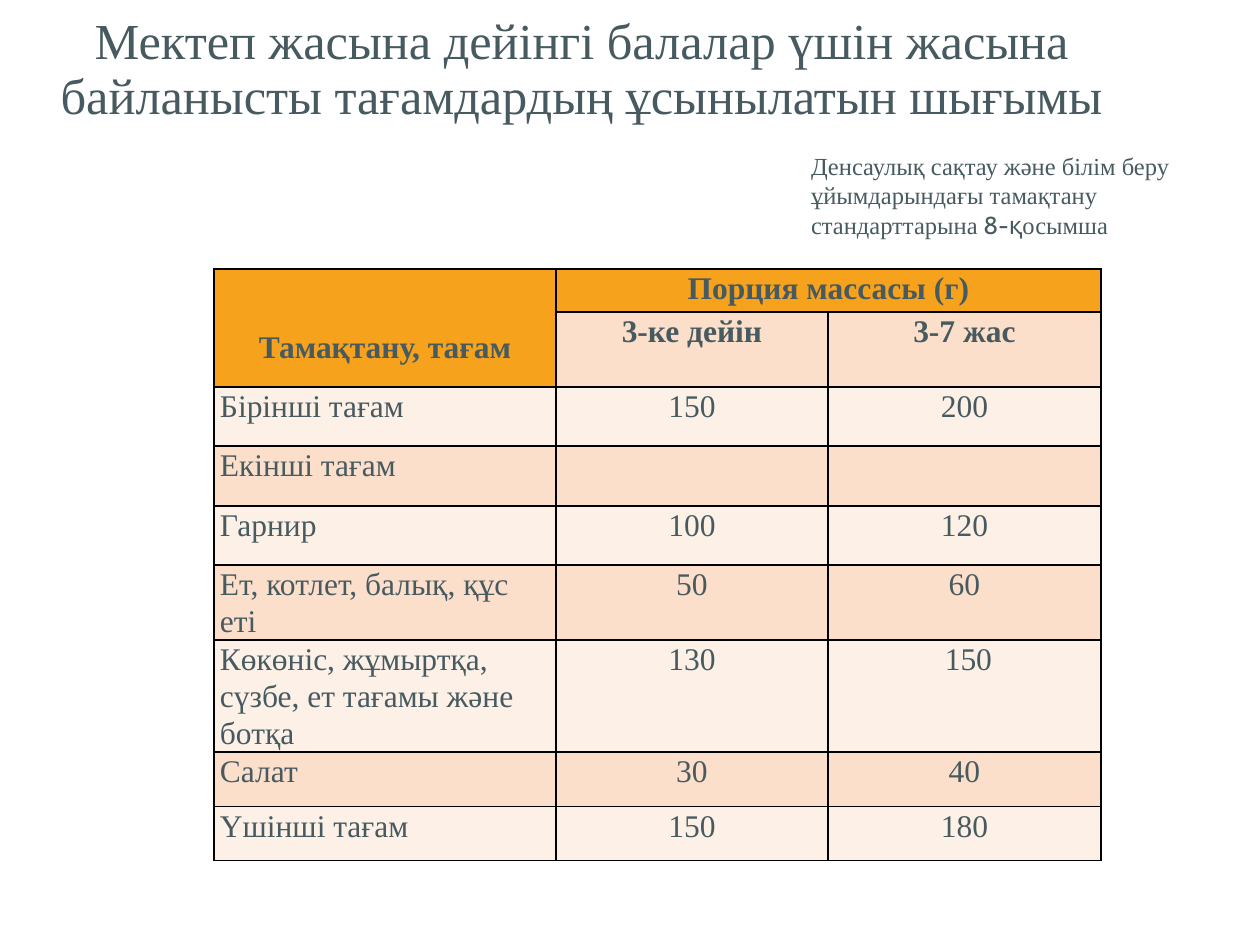
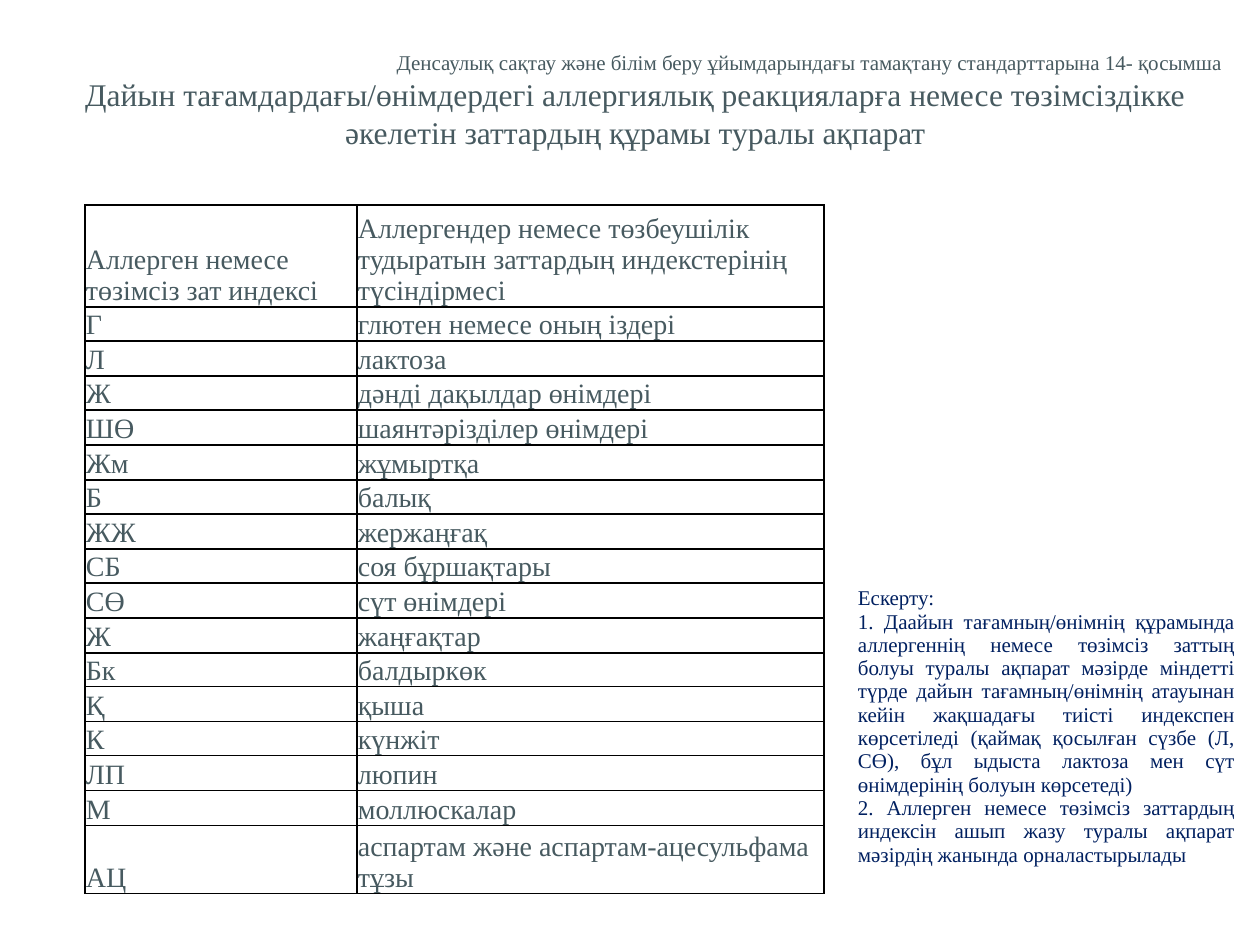
from lxml.etree import SubElement
from pptx import Presentation
from pptx.dml.color import RGBColor as RGB
from pptx.enum.text import MSO_ANCHOR as Anchor, MSO_AUTO_SIZE as Fit, PP_ALIGN as Align
from pptx.oxml.ns import qn
from pptx.util import Emu, Pt

PX = 914400 / 126
FONT, ALT = "Times New Roman", "Cabin"
SLATE, NAVY, BLACK = RGB(0x47, 0x5A, 0x60), RGB(0, 0x20, 0x60), RGB(0, 0, 0)
WHITE, AMBER = RGB(255, 255, 255), RGB(0xF6, 0xA2, 0x1D)
PEACH, CREAM = RGB(0xFB, 0xDF, 0xCB), RGB(0xFD, 0xF0, 0xE7)

TITLE = "Мектеп жасына дейінгі балалар үшін жасына байланысты тағамдардың ұсынылатын шығымы"
ANNEX = [
    ("Денсаулық сақтау және білім беру ұйымдарындағы тамақтану стандарттарына", FONT),
    (" 8-қ", ALT),
    ("осымша", FONT),
]
MEALS = [
    ("Тамақтану, тағам", "Порция массасы (г)", ""),
    ("", "3-ке дейін", "3-7 жас"),
    ("Бірінші тағам", "150", "200"),
    ("Екінші тағам", "", ""),
    ("Гарнир", "100", "120"),
    ("Ет, котлет, балық, құс еті", "50", "60"),
    ("Көкөніс, жұмыртқа, сүзбе, ет тағамы және ботқа", "130", " 150"),
    ("Салат", "30", "40"),
    ("Үшінші тағам", "150", "180"),
]
MEAL_ROWS = [43, 75, 59, 60, 59, 75, 112, 55, 54]

HEADING = [
    ("Денсаулық сақтау және білім беру ұйымдарындағы тамақтану стандарттарына 14- қосымша",
     12, Align.RIGHT),
    ("Дайын тағамдардағы/өнімдердегі аллергиялық реакцияларға немесе төзімсіздікке "
     "әкелетін заттардың құрамы туралы ақпарат", 18, Align.CENTER),
]
CODES = [
    ("Аллерген немесе төзімсіз зат индексі",
     "Аллергендер немесе төзбеушілік тудыратын заттардың индекстерінің түсіндірмесі"),
    ("Г", "глютен немесе оның іздері"),
    ("Л", "лактоза"),
    ("Ж", "дәнді дақылдар өнімдері"),
    ("ШӨ", "шаянтәрізділер өнімдері"),
    ("Жм", "жұмыртқа"),
    ("Б", "балық"),
    ("ЖЖ", "жержаңғақ"),
    ("СБ", "соя бұршақтары"),
    ("СӨ", "сүт өнімдері"),
    ("Ж", "жаңғақтар"),
    ("Бк", "балдыркөк"),
    ("Қ", "қыша"),
    ("К", "күнжіт"),
    ("ЛП", "люпин"),
    ("М", "моллюскалар"),
    ("АЦ", "аспартам және аспартам-ацесульфама тұзы"),
]
NOTES = [
    "Ескерту:",
    "1. Даайын тағамның/өнімнің құрамында аллергеннің немесе төзімсіз заттың болуы туралы "
    "ақпарат мәзірде міндетті түрде дайын тағамның/өнімнің атауынан кейін жақшадағы тиісті "
    "индекспен көрсетіледі (қаймақ қосылған сүзбе (Л, СӨ), бұл ыдыста лактоза мен сүт "
    "өнімдерінің болуын көрсетеді)",
    "2. Аллерген немесе төзімсіз заттардың индексін ашып жазу туралы ақпарат мәзірдің "
    "жанында орналастырылады",
]


def px(*nums):
    return [Emu(round(n * PX)) for n in nums]


def style(para, size, align=Align.LEFT, color=SLATE, bold=False, lead=1.0):
    para.alignment, para.line_spacing = align, lead
    font = para.font
    font.name, font.size, font.bold = FONT, Pt(size), bold
    font.color.rgb = color


def inset(part, left, top, right, low):
    """Set the margins of a cell or text frame."""
    part.margin_left, part.margin_top, part.margin_right, part.margin_bottom = px(
        left, top, right, low)


def border(cell):
    props = cell._tc.get_or_add_tcPr()
    for i, side in enumerate(("lnL", "lnR", "lnT", "lnB")):
        line = SubElement(props, qn("a:" + side), w=str(Pt(1)))
        fill = SubElement(line, qn("a:solidFill"))
        SubElement(fill, qn("a:srgbClr"), val=str(BLACK))
        props.insert(i, line)


def grid(slide, left, top, cols, rows):
    """Add a plain table with the given column widths and row heights."""
    shape = slide.shapes.add_table(
        len(rows), len(cols), *px(left, top, sum(cols), sum(rows)))
    table = shape.table
    table.first_row = table.horz_banding = False
    for col, wide in zip(table.columns, px(*cols)):
        col.width = wide
    for row, high in zip(table.rows, px(*rows)):
        row.height = high
    return table


def paint(part, color):
    part.fill.solid()
    part.fill.fore_color.rgb = color


def head(slide, box, pad):
    """Place the title and return its text frame."""
    title = slide.shapes.title
    title.left, title.top, title.width, title.height = px(*box)
    frame = title.text_frame
    frame.auto_size, frame.word_wrap = Fit.NONE, True
    inset(frame, *pad)
    return frame


def meals(slide):
    frame = head(slide, (15, 16, 1134, 109), (25, 25, 25, 25))
    paint(slide.shapes.title, WHITE)
    frame.vertical_anchor = Anchor.MIDDLE
    frame.text = TITLE
    style(frame.paragraphs[0], 28.8, Align.CENTER, lead=0.9)

    frame = slide.shapes.add_textbox(*px(798, 145, 436, 102)).text_frame
    frame.word_wrap = True
    inset(frame, 13, 6, 13, 6)
    para = frame.paragraphs[0]
    style(para, 14)
    for text, name in ANNEX:
        run = para.add_run()
        run.text, run.font.name = text, name

    table = grid(slide, 214, 269, (342, 272, 273), MEAL_ROWS)
    for r, row in enumerate(MEALS):
        for c, text in enumerate(row):
            cell = table.cell(r, c)
            cell.text = text
            top = r < 2
            align = Align.CENTER if top or c else Align.LEFT
            style(cell.text_frame.paragraphs[0], 18, align, bold=top, lead=Pt(21.3))
            inset(cell, 6, 0, 6, 0)
            paint(cell, AMBER if r == 0 or top and c == 0 else PEACH if r % 2 else CREAM)
            border(cell)
    corner = table.cell(0, 0)
    corner.merge(table.cell(1, 0))
    corner.vertical_anchor = Anchor.MIDDLE
    inset(corner, 0, 37, 0, 0)
    table.cell(0, 1).merge(table.cell(0, 2))


def codes(slide):
    frame = head(slide, (35, 44, 1201, 115), (13, 6, 13, 6))
    frame.vertical_anchor = Anchor.TOP
    frame.text = "\n".join(text for text, _, _ in HEADING)
    for para, (_, size, align) in zip(frame.paragraphs, HEADING):
        style(para, size, align)

    ends = [307 + 519 * i // 15 for i in range(16)]
    rows = [102, *(b - a for a, b in zip(ends, ends[1:])), 68]
    table = grid(slide, 85, 205, (272, 467), rows)
    for r, row in enumerate(CODES):
        for c, text in enumerate(row):
            cell = table.cell(r, c)
            cell.text = text
            style(cell.text_frame.paragraphs[0], 16)
            cell.vertical_anchor = Anchor.BOTTOM
            inset(cell, 1, 1, 1, 0)
            cell.fill.background()
            border(cell)

    note = grid(slide, 853, 584, (387,), (339,)).cell(0, 0)
    note.text = "\n".join(NOTES)
    for para in note.text_frame.paragraphs:
        style(para, 12, Align.JUSTIFY, NAVY)
    inset(note, 5, 3, 5, 3)
    paint(note, WHITE)


def main():
    deck = Presentation()
    deck.slide_width, deck.slide_height = px(1260, 945)
    for build in (meals, codes):
        build(deck.slides.add_slide(deck.slide_layouts[5]))
    deck.save("out.pptx")


if __name__ == "__main__":
    main()
